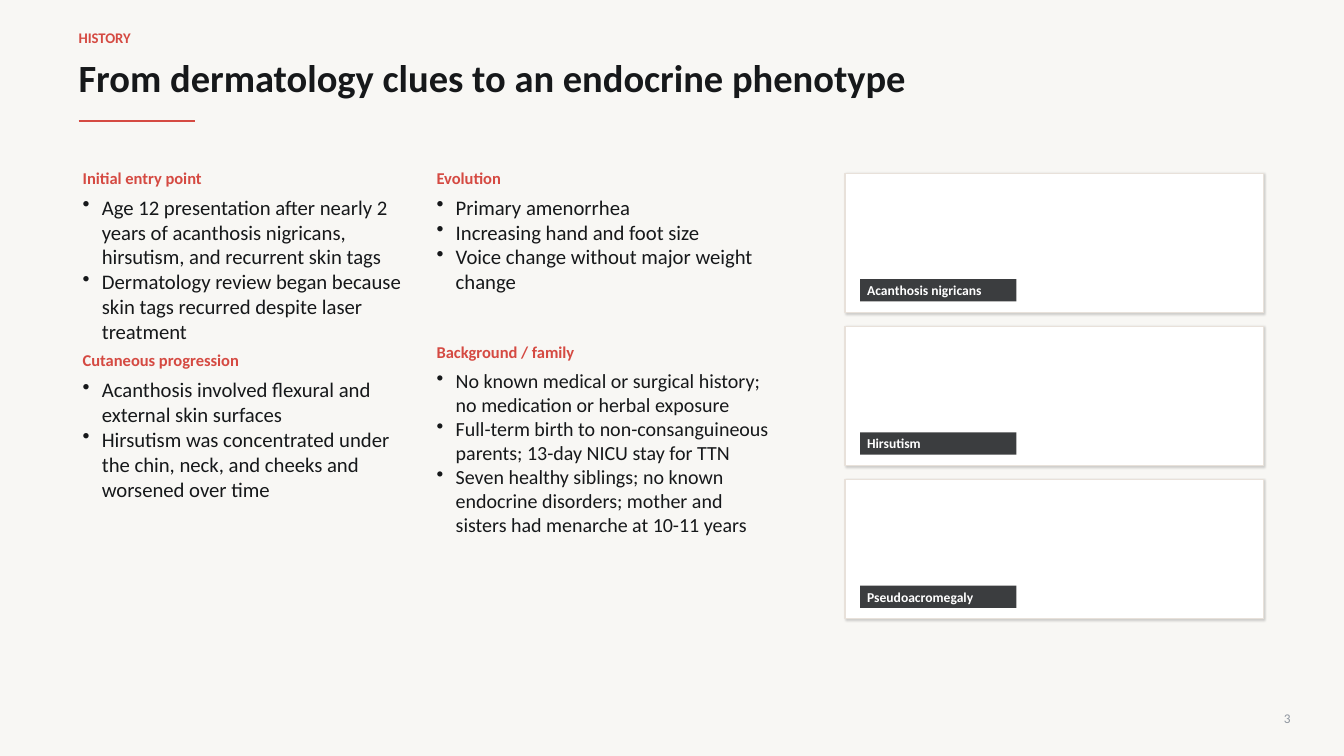
from lxml import etree
from pptx import Presentation
from pptx.dml.color import RGBColor
from pptx.enum import shapes, text
from pptx.oxml import ns
from pptx.util import Inches, Pt

RED = RGBColor(0xD5, 0x4A, 0x42)
INK = RGBColor(0x16, 0x18, 0x1A)
PAPER = RGBColor(0xF8, 0xF7, 0xF4)
WHITE = RGBColor(0xFF, 0xFF, 0xFF)
EDGE = RGBColor(0xE8, 0xE1, 0xDA)
DARK = RGBColor(0x11, 0x13, 0x15)
GREY = RGBColor(0x8F, 0x96, 0x9F)
FONT = "Calibri"
LEFT = 0.78

# Each column: left edge, then (top, heading, list height, text size, items)
COLUMNS = [
    (0.82, [
        (1.65, "Initial entry point", 1.2, 14.8, [
            "Age 12 presentation after nearly 2 years of acanthosis nigricans, "
            "hirsutism, and recurrent skin tags",
            "Dermatology review began because skin tags recurred despite laser "
            "treatment"]),
        (3.46, "Cutaneous progression", 1.2, 14.8, [
            "Acanthosis involved flexural and external skin surfaces",
            "Hirsutism was concentrated under the chin, neck, and cheeks and "
            "worsened over time"]),
    ]),
    (4.33, [
        (1.65, "Evolution", 1.4, 14.8, [
            "Primary amenorrhea",
            "Increasing hand and foot size",
            "Voice change without major weight change"]),
        (3.38, "Background / family", 1.8, 14.3, [
            "No known medical or surgical history; no medication or herbal "
            "exposure",
            "Full-term birth to non-consanguineous parents; 13-day NICU stay "
            "for TTN",
            "Seven healthy siblings; no known endocrine disorders; mother and "
            "sisters had menarche at 10-11 years"]),
    ]),
]
SIGNS = ["Acanthosis nigricans", "Hirsutism", "Pseudoacromegaly"]


def inches(*sizes):
    return [Inches(size) for size in sizes]


def add_node(parent, tag, **attrs):
    node = etree.SubElement(parent, ns.qn(tag))
    for name, value in attrs.items():
        node.set(name, str(value))
    return node


def add_text(slide, box, lines, size, color, bold=False, bullet=False,
             align=text.PP_ALIGN.LEFT):
    frame = slide.shapes.add_textbox(*inches(*box)).text_frame
    frame.word_wrap = True
    frame.margin_left = frame.margin_right = 0
    frame.margin_top = frame.margin_bottom = 0
    frame.vertical_anchor = (text.MSO_ANCHOR.TOP if bullet
                             else text.MSO_ANCHOR.MIDDLE)
    frame.text = "\n".join(lines)
    for para in frame.paragraphs:
        para.alignment = align
        if bullet:
            props = para._p.get_or_add_pPr()
            props.set("marL", str(Inches(0.19)))
            props.set("indent", str(Inches(-0.19)))
            add_node(props, "a:buChar", char="•")
        for run in para.runs:
            run.font.name = FONT
            run.font.size = Pt(size)
            run.font.bold = bold
            run.font.color.rgb = color


def add_rect(slide, box, fill):
    rect = slide.shapes.add_shape(shapes.MSO_SHAPE.RECTANGLE, *inches(*box))
    rect.shadow.inherit = False
    rect.fill.solid()
    rect.fill.fore_color.rgb = fill
    rect.line.fill.background()
    return rect


def add_head(slide, x, y):
    add_text(slide, (x, y, 3.2, 0.18), ["HISTORY"], 10.5, RED, True)
    add_text(slide, (x, y + 0.24, 8.5, 0.48),
             ["From dermatology clues to an endocrine phenotype"],
             27.5, INK, True)
    rule = slide.shapes.add_connector(
        shapes.MSO_CONNECTOR.STRAIGHT,
        *inches(x, y + 0.92, x + 1.15, y + 0.92))
    rule.line.color.rgb = RED
    rule.line.width = Pt(1.6)
    add_node(rule._element.spPr, "a:effectLst")


def add_column(slide, x, width, blocks):
    for top, head, height, size, items in blocks:
        add_text(slide, (x, top, width, 0.22), [head], 11.8, RED, True)
        add_text(slide, (x, top + 0.28, width, height), items, size, INK,
                 bullet=True)


def add_card(slide, x, y, width, height, label):
    """Draw a white panel with a dark label at its lower left."""
    card = add_rect(slide, (x, y, width, height), WHITE)
    card.line.color.rgb = EDGE
    card.line.width = Pt(0.9)
    effects = card._element.spPr.find(ns.qn("a:effectLst"))
    shadow = add_node(effects, "a:outerShdw", blurRad=Pt(1.5), dist=Pt(1),
                      dir=45 * 60000, algn="tl", rotWithShape=0)
    shade = add_node(shadow, "a:srgbClr", val="000000")
    add_node(shade, "a:alpha", val=16000)

    left, top = x + 0.15, y + height - 0.33
    tag = add_rect(slide, (left, top, 1.55, 0.22), DARK)
    tint = tag._element.spPr.find(ns.qn("a:solidFill"))[0]
    add_node(tint, "a:alpha", val=82000)
    add_text(slide, (left + 0.07, top + 0.03, 1.38, 0.16), [label], 9.7,
             WHITE, True)


def main():
    deck = Presentation()
    deck.slide_width, deck.slide_height = inches(13.33, 7.5)
    slide = deck.slides.add_slide(deck.slide_layouts[6])
    slide.background.fill.solid()
    slide.background.fill.fore_color.rgb = PAPER

    add_head(slide, LEFT, 0.28)
    for x, blocks in COLUMNS:
        add_column(slide, x, 3.35, blocks)
    for row, sign in enumerate(SIGNS):
        add_card(slide, 8.38, 1.72 + row * 1.52, 4.15, 1.38, sign)
    add_text(slide, (12.45, 7.03, 0.35, 0.18), ["3"], 9.5, GREY,
             align=text.PP_ALIGN.RIGHT)
    deck.save("out.pptx")


if __name__ == "__main__":
    main()
